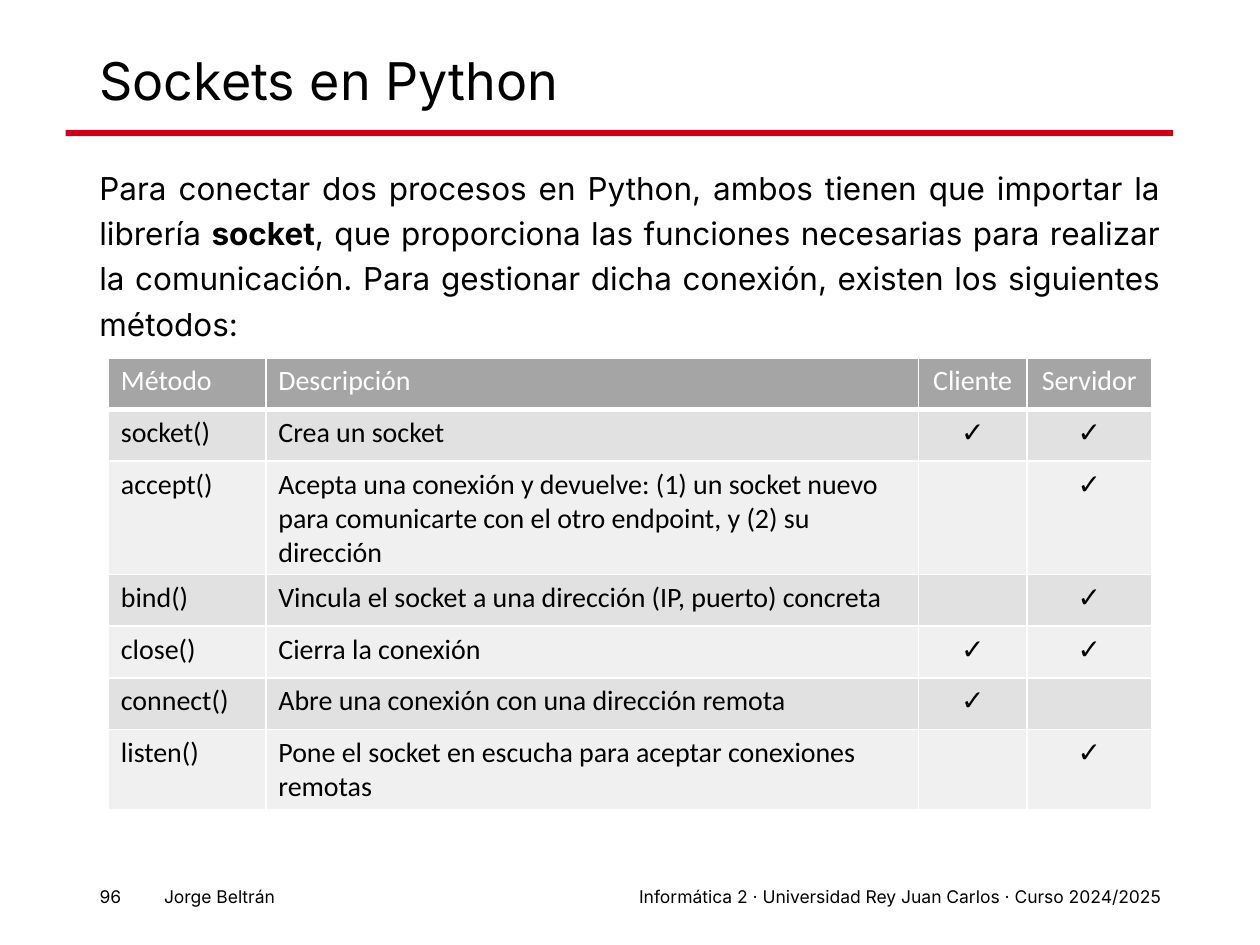
from lxml.etree import SubElement
from pptx import Presentation
from pptx.dml.color import RGBColor
from pptx.enum.shapes import MSO_SHAPE
from pptx.enum.text import MSO_ANCHOR, PP_ALIGN
from pptx.oxml.ns import qn
from pptx.util import Inches, Pt

MARGIN, CONTENT_WIDTH = 0.69, 8.62
BLACK, WHITE, RED = "000000", "FFFFFF", "CB0017"
HEADER_GREY, BANDS = "A5A5A5", ("E1E1E1", "F0F0F0")

INTRO = [
    ("Para conectar dos procesos en Python, ambos tienen que importar la librería ", False),
    ("socket", True),
    (", que proporciona las funciones necesarias para realizar la comunicación. "
     "Para gestionar dicha conexión, existen los siguientes métodos:", False),
]
HEADINGS = ("Método", "Descripción", "Cliente", "Servidor")
METHODS = [  # method, description, used by client, used by server
    ("socket()", "Crea un socket", True, True),
    ("accept()", "Acepta una conexión y devuelve: (1) un socket nuevo para "
     "comunicarte con el otro endpoint, y (2) su dirección", False, True),
    ("bind()", "Vincula el socket a una dirección (IP, puerto) concreta", False, True),
    ("close()", "Cierra la conexión", True, True),
    ("connect()", "Abre una conexión con una dirección remota", True, False),
    ("listen()", "Pone el socket en escucha para aceptar conexiones remotas", False, True),
]
COLUMN_WIDTHS = (1.25, 5.18, 0.86, 0.99)
ROW_HEIGHT = 0.41


def rgb(value):
    return RGBColor.from_string(value)


def style(paragraph, size, font="Inter", color=BLACK, align=PP_ALIGN.LEFT):
    paragraph.alignment = align
    paragraph.font.size = Pt(size)
    paragraph.font.name = font
    paragraph.font.color.rgb = rgb(color)


def add_text(slide, box, runs, size, align=PP_ALIGN.LEFT, anchor=MSO_ANCHOR.TOP):
    """Add one paragraph made of (text, bold) runs and return it."""
    frame = slide.shapes.add_textbox(*map(Inches, box)).text_frame
    frame.word_wrap = True
    frame.vertical_anchor = anchor
    paragraph = frame.paragraphs[0]
    for text, bold in runs:
        run = paragraph.add_run()
        run.text = text
        if bold:
            run.font.bold = True
    style(paragraph, size, align=align)
    return paragraph


def add_heading(slide, left, top, width):
    title = add_text(slide, (left, top, width, 0.52), [("Sockets en Python", False)],
                     29.7, anchor=MSO_ANCHOR.MIDDLE)
    title.line_spacing = 0.9
    rule = slide.shapes.add_shape(
        MSO_SHAPE.RECTANGLE,
        *map(Inches, (left - 0.17, top + 0.63, width + 0.17, 0.05)))
    rule.shadow.inherit = False
    rule.fill.solid()
    rule.fill.fore_color.rgb = rgb(RED)
    rule.line.fill.background()


def add_intro(slide, box):
    intro = add_text(slide, box, INTRO, 18, PP_ALIGN.JUSTIFY)
    intro.line_spacing = 1.2
    intro.space_before = Pt(7.5)


def set_borders(cell, bottom):
    properties = cell._tc.get_or_add_tcPr()
    widths = {"a:lnL": 1, "a:lnR": 1, "a:lnT": 1, "a:lnB": bottom}
    for side, width in widths.items():
        line = SubElement(properties, qn(side), w=str(Pt(width)))
        fill = SubElement(line, qn("a:solidFill"))
        SubElement(fill, qn("a:srgbClr"), val=WHITE)


def add_methods(slide, left, top):
    marks = {True: "✓", False: ""}
    rows = [HEADINGS] + [(name, description, marks[client], marks[server])
                         for name, description, client, server in METHODS]
    table = slide.shapes.add_table(
        len(rows), len(HEADINGS), Inches(left), Inches(top),
        Inches(sum(COLUMN_WIDTHS)), Inches(ROW_HEIGHT * len(rows))).table
    for column, width in zip(table.columns, COLUMN_WIDTHS):
        column.width = Inches(width)
    for r, row in enumerate(rows):
        table.rows[r].height = Inches(ROW_HEIGHT)
        is_header = r == 0
        for c, text in enumerate(row):
            cell = table.cell(r, c)
            cell.text = text
            style(cell.text_frame.paragraphs[0], 16, "Calibri",
                  WHITE if is_header else BLACK,
                  PP_ALIGN.CENTER if c >= 2 else PP_ALIGN.LEFT)
            set_borders(cell, bottom=3 if is_header else 1)
            cell.fill.solid()
            cell.fill.fore_color.rgb = rgb(HEADER_GREY if is_header else BANDS[(r - 1) % 2])


def add_footer(slide, top):
    parts = [
        (2.4, 6.91, "Informática 2 · Universidad Rey Juan Carlos · Curso 2024/2025"),
        (0.21, 2.07, "Jorge Beltrán"),
        (0.58, 0.48, "96"),
    ]
    for left, width, text in parts:
        add_text(slide, (left, top, width, 0.27), [(text, False)], 10, PP_ALIGN.RIGHT)


def main():
    deck = Presentation()
    deck.slide_width, deck.slide_height = Inches(10), Inches(7.5)
    slide = deck.slides.add_slide(deck.slide_layouts[6])
    add_heading(slide, MARGIN, 0.4, CONTENT_WIDTH)
    add_intro(slide, (MARGIN, 1.23, CONTENT_WIDTH, 1.64))
    add_methods(slide, 0.86, 2.84)
    add_footer(slide, 6.98)
    deck.save("out.pptx")


if __name__ == "__main__":
    main()
